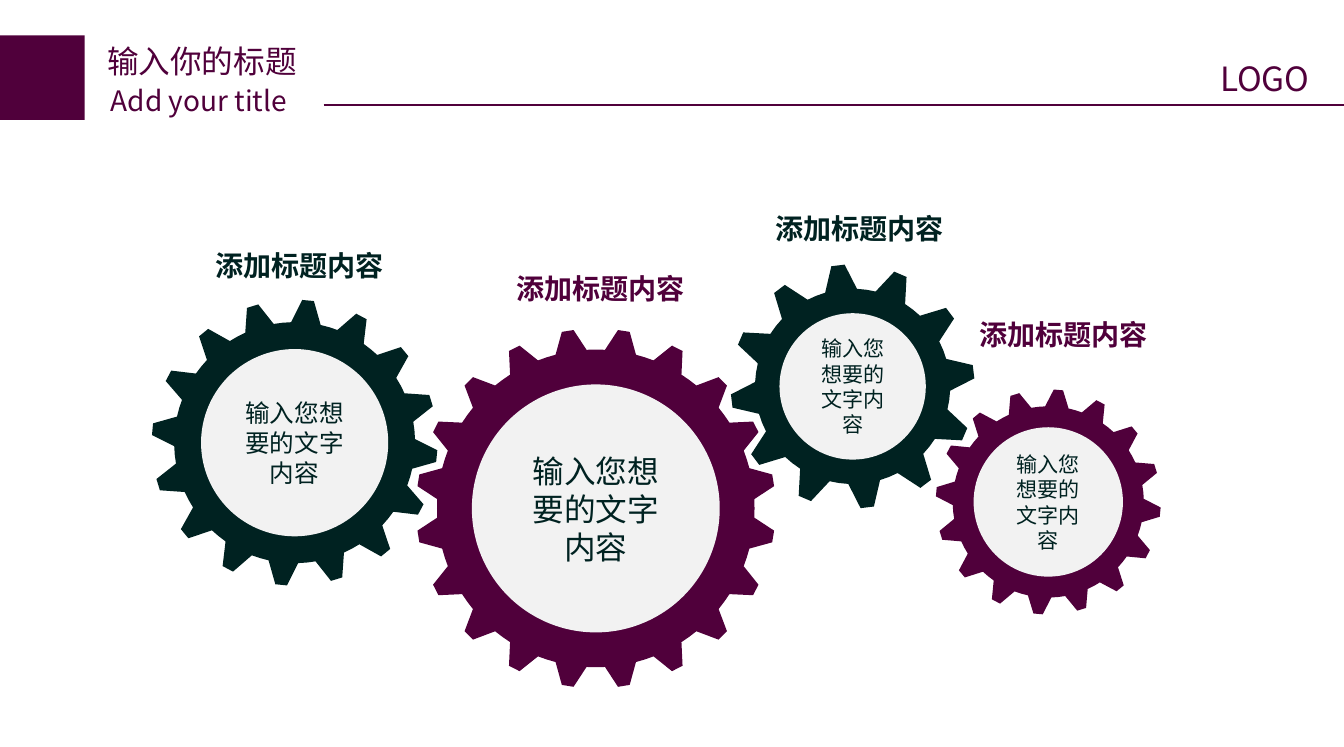
from dataclasses import dataclass
from math import cos, radians, sin

from lxml.etree import SubElement
from pptx import Presentation
from pptx.dml.color import RGBColor
from pptx.enum.shapes import MSO_CONNECTOR, MSO_SHAPE
from pptx.enum.text import MSO_ANCHOR, MSO_AUTO_SIZE, PP_ALIGN
from pptx.oxml.ns import qn
from pptx.shapes.base import BaseShape
from pptx.slide import Slide
from pptx.util import Cm, Pt

COLOURS = {"plum": "50003B", "pine": "002221", "disc": "F2F2F2"}
CJK_FONT = "Noto Sans CJK SC"
LINE_HEIGHT = 1.2
TIP_SHARE, BASE_SHARE = 0.105, 0.315  # half widths of a tooth, as shares of the pitch
LABEL_WIDTH, LABEL_HEIGHT = 4.72, 0.96


@dataclass(frozen=True)
class TextStyle:
    size: int
    colour: str
    font: str = CJK_FONT
    bold: bool = False
    align: PP_ALIGN = PP_ALIGN.LEFT
    anchor: MSO_ANCHOR = MSO_ANCHOR.TOP
    wrap: bool = True
    side_inset: float = 0.25
    top_inset: float = 0.13


@dataclass(frozen=True)
class Gear:
    """A gear with its disc and label; lengths in cm, phase in degrees from the top."""
    x: float
    y: float
    outer: float
    root: float
    disc: float
    teeth: int
    phase: float
    colour: str
    text_size: int
    label_x: float
    label_y: float
    label_font: str = "Arial"


GEARS = [
    Gear(11.97, 10.21, 3.61, 3.19, 2.49, 20, 9, "plum", 18, 12.07, 5.31),
    Gear(17.13, 7.76, 2.45, 1.96, 1.47, 12, -6.9, "pine", 12, 17.27, 4.09),
    Gear(5.92, 8.89, 2.87, 2.42, 1.88, 16, 5.4, "pine", 14, 6.02, 4.83, CJK_FONT),
    Gear(21.06, 10.08, 2.26, 1.92, 1.5, 16, 5.2, "plum", 12, 21.36, 6.22),
]


def rgb(name: str) -> RGBColor:
    return RGBColor.from_string(COLOURS[name])


def paint(shape: BaseShape, colour: str) -> None:
    shape.shadow.inherit = False
    shape.fill.solid()
    shape.fill.fore_color.rgb = rgb(colour)
    shape.line.fill.background()


def write(shape: BaseShape, text: str, style: TextStyle) -> None:
    frame = shape.text_frame
    frame_format = {
        "word_wrap": style.wrap,
        "auto_size": MSO_AUTO_SIZE.NONE,
        "vertical_anchor": style.anchor,
        "margin_left": Cm(style.side_inset),
        "margin_right": Cm(style.side_inset),
        "margin_top": Cm(style.top_inset),
        "margin_bottom": Cm(style.top_inset),
    }
    for name, value in frame_format.items():
        setattr(frame, name, value)
    para = frame.paragraphs[0]
    para.alignment = style.align
    para.line_spacing = Pt(LINE_HEIGHT * style.size)
    span = para.add_run()
    span.text = text
    font_format = {"size": Pt(style.size), "bold": style.bold, "name": style.font}
    for name, value in font_format.items():
        setattr(span.font, name, value)
    span.font.color.rgb = rgb(style.colour)
    SubElement(span.font._element, qn("a:ea")).set("typeface", CJK_FONT)


def add_text(page: Slide, area: tuple[float, ...], text: str, style: TextStyle) -> None:
    box = page.shapes.add_textbox(*map(Cm, area))
    write(box, text, style)


def gear_outline(gear: Gear) -> list[tuple[int, int]]:
    pitch = 360 / gear.teeth
    profile = [(-BASE_SHARE, gear.root), (-TIP_SHARE, gear.outer), (TIP_SHARE, gear.outer),
               (BASE_SHARE, gear.root), (0.5, gear.root)]
    points = []
    for tooth in range(gear.teeth):
        for share, radius in profile:
            angle = radians(gear.phase + (tooth + share) * pitch)
            points.append((Cm(gear.x + radius * sin(angle)), Cm(gear.y - radius * cos(angle))))
    return points


def add_gear(page: Slide, gear: Gear) -> None:
    first, *rest = gear_outline(gear)
    builder = page.shapes.build_freeform(*first)
    builder.add_line_segments(rest, close=True)
    paint(builder.convert_to_shape(), gear.colour)

    disc = page.shapes.add_shape(
        MSO_SHAPE.OVAL, Cm(gear.x - gear.disc), Cm(gear.y - gear.disc),
        Cm(2 * gear.disc), Cm(2 * gear.disc))
    paint(disc, "disc")
    write(disc, "输入您想要的文字内容",
          TextStyle(gear.text_size, "pine", "Arial", align=PP_ALIGN.CENTER,
                    anchor=MSO_ANCHOR.MIDDLE))

    area = (gear.label_x - LABEL_WIDTH / 2, gear.label_y, LABEL_WIDTH, LABEL_HEIGHT)
    add_text(page, area, "添加标题内容",
             TextStyle(16, gear.colour, gear.label_font, bold=True, align=PP_ALIGN.CENTER,
                       side_inset=0.28, top_inset=0.15))


def add_header(page: Slide) -> None:
    square = page.shapes.add_shape(MSO_SHAPE.RECTANGLE, Cm(0), Cm(0.71), Cm(1.7), Cm(1.7))
    paint(square, "plum")

    title = page.shapes.title
    place = {"left": 1.9, "top": 0.71, "width": 4.39, "height": 1.02}
    for name, value in place.items():
        setattr(title, name, Cm(value))
    write(title, "输入你的标题", TextStyle(18, "plum"))
    add_text(page, (1.98, 1.55, 4.39, 0.94), "Add your title", TextStyle(16, "plum"))

    rule = page.shapes.add_connector(
        MSO_CONNECTOR.STRAIGHT, Cm(6.5), Cm(2.11), Cm(27), Cm(2.11))
    rule.line.color.rgb = rgb("plum")
    rule.line.width = Pt(0.75)
    SubElement(rule._element.spPr, qn("a:effectLst"))

    add_text(page, (24.26, 1.04, 2.44, 1.07), "LOGO", TextStyle(19, "plum", wrap=False))


def main() -> None:
    deck = Presentation()
    deck.slide_width, deck.slide_height = Cm(27), Cm(15)
    page = deck.slides.add_slide(deck.slide_layouts.get_by_name("Title Only"))
    add_header(page)
    for gear in GEARS:
        add_gear(page, gear)
    deck.save("out.pptx")


if __name__ == "__main__":
    main()
